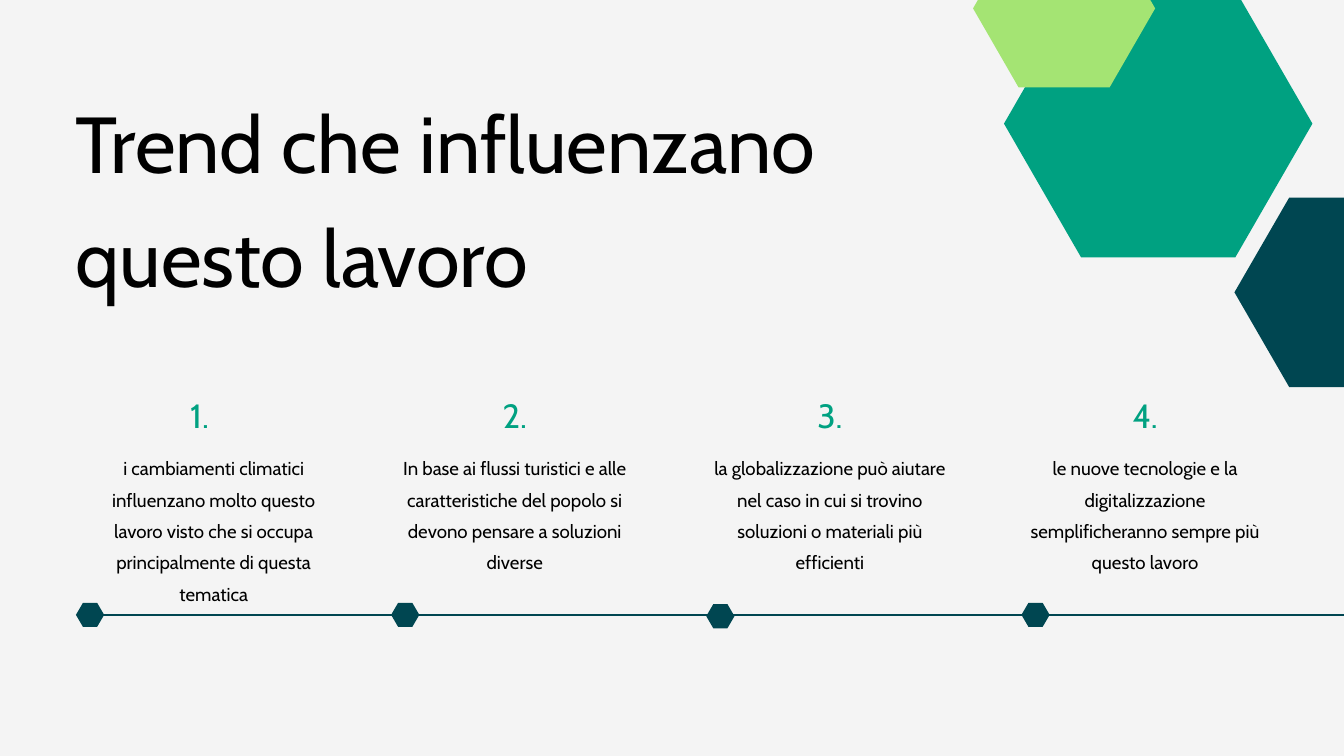
from dataclasses import dataclass

from lxml import etree
from pptx import Presentation
from pptx.dml.color import RGBColor
from pptx.enum.shapes import MSO_CONNECTOR, MSO_SHAPE
from pptx.enum.text import MSO_ANCHOR, MSO_AUTO_SIZE, PP_ALIGN
from pptx.oxml.ns import qn
from pptx.util import Inches, Pt

HEXAGON = MSO_SHAPE.HEXAGON
STRAIGHT = MSO_CONNECTOR.STRAIGHT
TOP = MSO_ANCHOR.TOP
NO_FIT = MSO_AUTO_SIZE.NONE
LEFT, CENTER = PP_ALIGN.LEFT, PP_ALIGN.CENTER


@dataclass(frozen=True)
class Theme:
    font: str = "Cabin"
    paper: RGBColor = RGBColor.from_string("F4F4F4")
    ink: RGBColor = RGBColor.from_string("000000")
    navy: RGBColor = RGBColor.from_string("004651")
    green: RGBColor = RGBColor.from_string("00A181")
    lime: RGBColor = RGBColor.from_string("A4E473")
    title_size: Pt = Pt(85)
    number_size: Pt = Pt(36)
    body_size: Pt = Pt(20)


theme = Theme()


def write(box, text, size, color, align, spacing):
    frame = box.text_frame
    frame.word_wrap = True
    frame.auto_size = NO_FIT
    frame.vertical_anchor = TOP
    frame.margin_left = frame.margin_right = 0
    frame.margin_top = frame.margin_bottom = 0
    para = frame.paragraphs[0]
    para.alignment = align
    para.line_spacing = spacing
    span = para.add_run()
    span.text = text
    span.font.name = theme.font
    span.font.size = size
    span.font.color.rgb = color


def add_hexagon(page, left, top, width, height, color):
    hexagon = page.shapes.add_shape(
        HEXAGON, Inches(left), Inches(top), Inches(width), Inches(height)
    )
    hexagon.adjustments[0] = width / 4 / height
    hexagon.shadow.inherit = False
    hexagon.fill.solid()
    hexagon.fill.fore_color.rgb = color
    hexagon.line.fill.background()


deck = Presentation()
deck.slide_width = Inches(20)
deck.slide_height = Inches(11.25)
page = deck.slides.add_slide(deck.slide_layouts[5])
page.background.fill.solid()
page.background.fill.fore_color.rgb = theme.paper

title = page.shapes.title
title.left, title.top = Inches(1.12), Inches(1.12)
title.width, title.height = Inches(14.07), Inches(3.43)
write(title, "Trend che influenzano questo lavoro", theme.title_size, theme.ink, LEFT, 1.2)

timeline = page.shapes.add_connector(
    STRAIGHT, Inches(1.39), Inches(9.15), Inches(20), Inches(9.15)
)
timeline.line.color.rgb = theme.navy
timeline.line.width = Pt(1.5)
etree.SubElement(timeline._element.spPr, qn("a:effectLst"))

first_column, column_step, column_width = 1.13, 4.69, 3.68
trends = [
    ("i cambiamenti climatici influenzano molto questo lavoro visto che si occupa "
     "principalmente di questa tematica", 0.21, 8.97),
    ("In base ai flussi turistici e alle caratteristiche del popolo si devono "
     "pensare a soluzioni diverse", 0, 8.97),
    ("la globalizzazione può aiutare nel caso in cui si trovino soluzioni o "
     "materiali più efficienti", 0, 8.99),
    ("le nuove tecnologie e la digitalizzazione semplificheranno sempre più "
     "questo lavoro", 0, 8.97),
]
for index, (text, indent, marker_top) in enumerate(trends):
    left = first_column + index * column_step
    number = page.shapes.add_textbox(
        Inches(left), Inches(5.75), Inches(column_width), Inches(0.6)
    )
    write(number, f"{index + 1}.", theme.number_size, theme.green, CENTER, 1.2)
    body = page.shapes.add_textbox(
        Inches(left + indent), Inches(6.67), Inches(column_width), Inches(1.92)
    )
    write(body, text, theme.body_size, theme.ink, CENTER, 1.4)
    add_hexagon(page, left, marker_top, 0.42, 0.36, theme.navy)

add_hexagon(page, 18.37, 2.94, 3.26, 2.82, theme.navy)
add_hexagon(page, 14.94, -0.15, 4.59, 3.98, theme.green)
add_hexagon(page, 14.48, -1.05, 2.71, 2.35, theme.lime)

deck.save("out.pptx")
